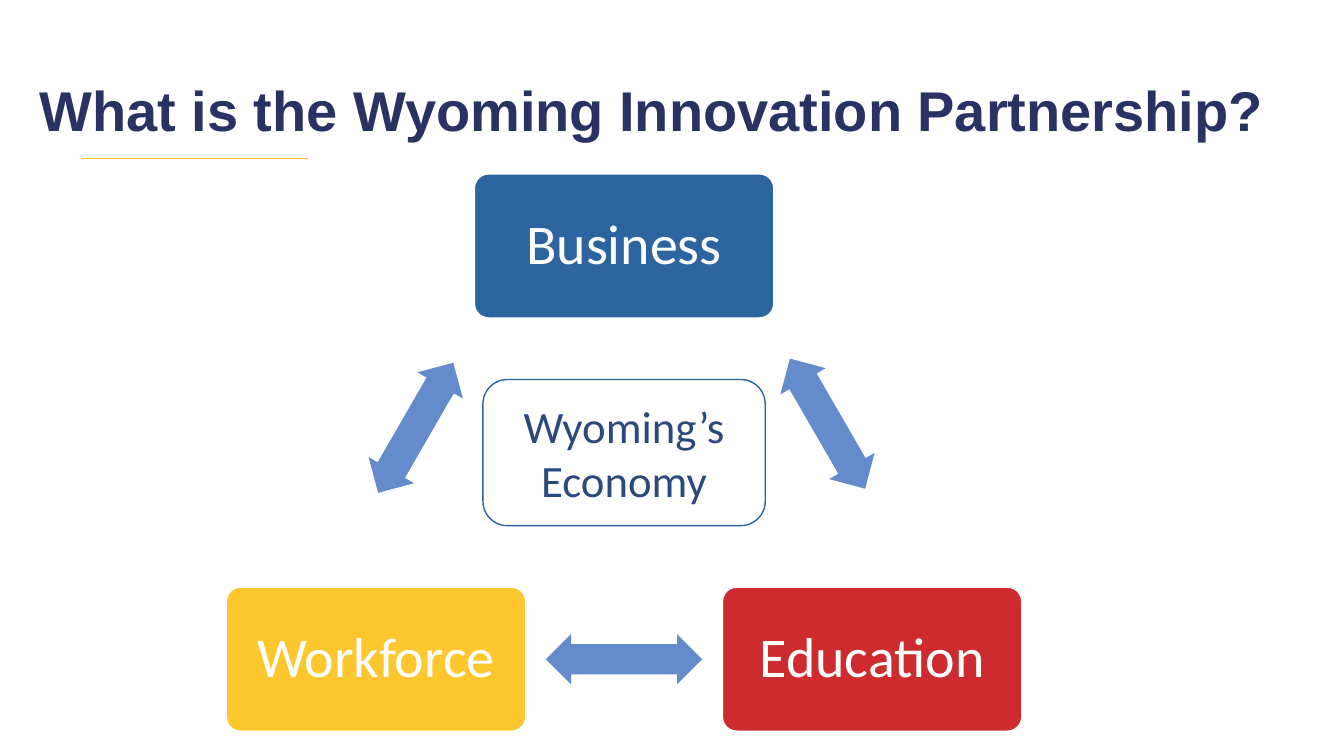
from dataclasses import dataclass

from lxml import etree
from pptx import Presentation
from pptx.dml.color import RGBColor
from pptx.enum.shapes import MSO_CONNECTOR, MSO_SHAPE
from pptx.enum.text import MSO_ANCHOR, MSO_AUTO_SIZE, PP_ALIGN as Align
from pptx.oxml.ns import qn
from pptx.util import Inches, Pt

NAVY = RGBColor(0x28, 0x32, 0x63)
GOLD = RGBColor(0xF7, 0xBE, 0x24)
BLUE = RGBColor(0x2B, 0x64, 0x9F)
RED = RGBColor(0xCE, 0x2B, 0x2F)
YELLOW = RGBColor(0xFE, 0xC7, 0x2E)
ARROW_BLUE = RGBColor(0x64, 0x8B, 0xCB)
TEXT_BLUE = RGBColor(0x2A, 0x4A, 0x7D)
WHITE = RGBColor(0xFF, 0xFF, 0xFF)

# Centres of the diagram's parts lie on a grid of three columns and three rows.
FIRST_COLUMN, COLUMN_STEP = 3.73, 2.46
FIRST_ROW, ROW_STEP = 2.44, 2.05


@dataclass(frozen=True)
class Card:
    text: str
    column: float
    row: float
    fill: RGBColor | None
    line: RGBColor = WHITE
    color: RGBColor = WHITE
    font_size: int = 40
    line_spacing: float = 0.9
    width: float = 2.97
    height: float = 1.43
    corner: float = 0.1


@dataclass(frozen=True)
class Arrow:
    column: float
    row: float
    rotation: int
    width: float = 1.49
    height: float = 0.52


CARDS = [
    Card("Business", 1, 0, BLUE),
    Card("Education", 2, 2, RED),
    Card("Workforce", 0, 2, YELLOW),
    Card("Wyoming’s\nEconomy", 1, 1, None, line=BLUE, color=TEXT_BLUE, font_size=32,
         line_spacing=1.0, width=2.8, height=1.45, corner=0.167),
]
ARROWS = [
    Arrow(1.82, 0.86, 60),
    Arrow(1, 2, 180, width=1.55, height=0.5),
    Arrow(0.16, 0.88, 300),
]


def write_text(shape, text: str, *, size: int, color: RGBColor, font: str = "Calibri",
               bold: bool = False, align: Align = Align.CENTER,
               line_spacing: float = 0.9) -> None:
    frame = shape.text_frame
    frame.text = text
    frame.word_wrap = True
    frame.auto_size = MSO_AUTO_SIZE.NONE
    frame.vertical_anchor = MSO_ANCHOR.MIDDLE
    for paragraph in frame.paragraphs:
        paragraph.alignment = align
        paragraph.line_spacing = line_spacing
        for run in paragraph.runs:
            run.font.name = font
            run.font.size = Pt(size)
            run.font.bold = bold
            run.font.color.rgb = color


def add_centred_shape(slide, kind: MSO_SHAPE, part: Card | Arrow):
    """Add a shape whose centre is at the part's column and row."""
    left = FIRST_COLUMN + part.column * COLUMN_STEP - part.width / 2
    top = FIRST_ROW + part.row * ROW_STEP - part.height / 2
    shape = slide.shapes.add_shape(
        kind, Inches(left), Inches(top), Inches(part.width), Inches(part.height))
    shape.shadow.inherit = False
    return shape


def add_card(slide, card: Card) -> None:
    shape = add_centred_shape(slide, MSO_SHAPE.ROUNDED_RECTANGLE, card)
    shape.adjustments[0] = card.corner
    if card.fill is None:
        shape.fill.background()
    else:
        shape.fill.solid()
        shape.fill.fore_color.rgb = card.fill
    shape.line.color.rgb = card.line
    shape.line.width = Pt(1)
    write_text(shape, card.text, size=card.font_size, color=card.color,
               line_spacing=card.line_spacing)


def add_arrow(slide, arrow: Arrow) -> None:
    shape = add_centred_shape(slide, MSO_SHAPE.LEFT_RIGHT_ARROW, arrow)
    shape.adjustments[0] = 0.6
    shape.adjustments[1] = 0.5
    shape.rotation = arrow.rotation
    shape.fill.solid()
    shape.fill.fore_color.rgb = ARROW_BLUE
    shape.line.fill.background()


def add_title(slide) -> None:
    title = slide.shapes.title
    title.left, title.top = Inches(0.29), Inches(0.4)
    title.width, title.height = Inches(12.45), Inches(1.45)
    write_text(title, "What is the Wyoming Innovation Partnership?", size=40,
               color=NAVY, font="Arial", bold=True, align=Align.LEFT)


def add_title_rule(slide) -> None:
    rule = slide.shapes.add_connector(
        MSO_CONNECTOR.STRAIGHT, Inches(0.81), Inches(1.57), Inches(3.05), Inches(1.57))
    rule.line.color.rgb = GOLD
    rule.line.width = Pt(1)
    etree.SubElement(rule.element.spPr, qn("a:effectLst"))


def main() -> None:
    presentation = Presentation()
    presentation.slide_width = Inches(13.33)
    presentation.slide_height = Inches(7.5)
    title_only = presentation.slide_layouts.get_by_name("Title Only")
    slide = presentation.slides.add_slide(title_only)
    add_title(slide)
    add_title_rule(slide)
    for arrow in ARROWS:
        add_arrow(slide, arrow)
    for card in CARDS:
        add_card(slide, card)
    presentation.save("out.pptx")


if __name__ == "__main__":
    main()
